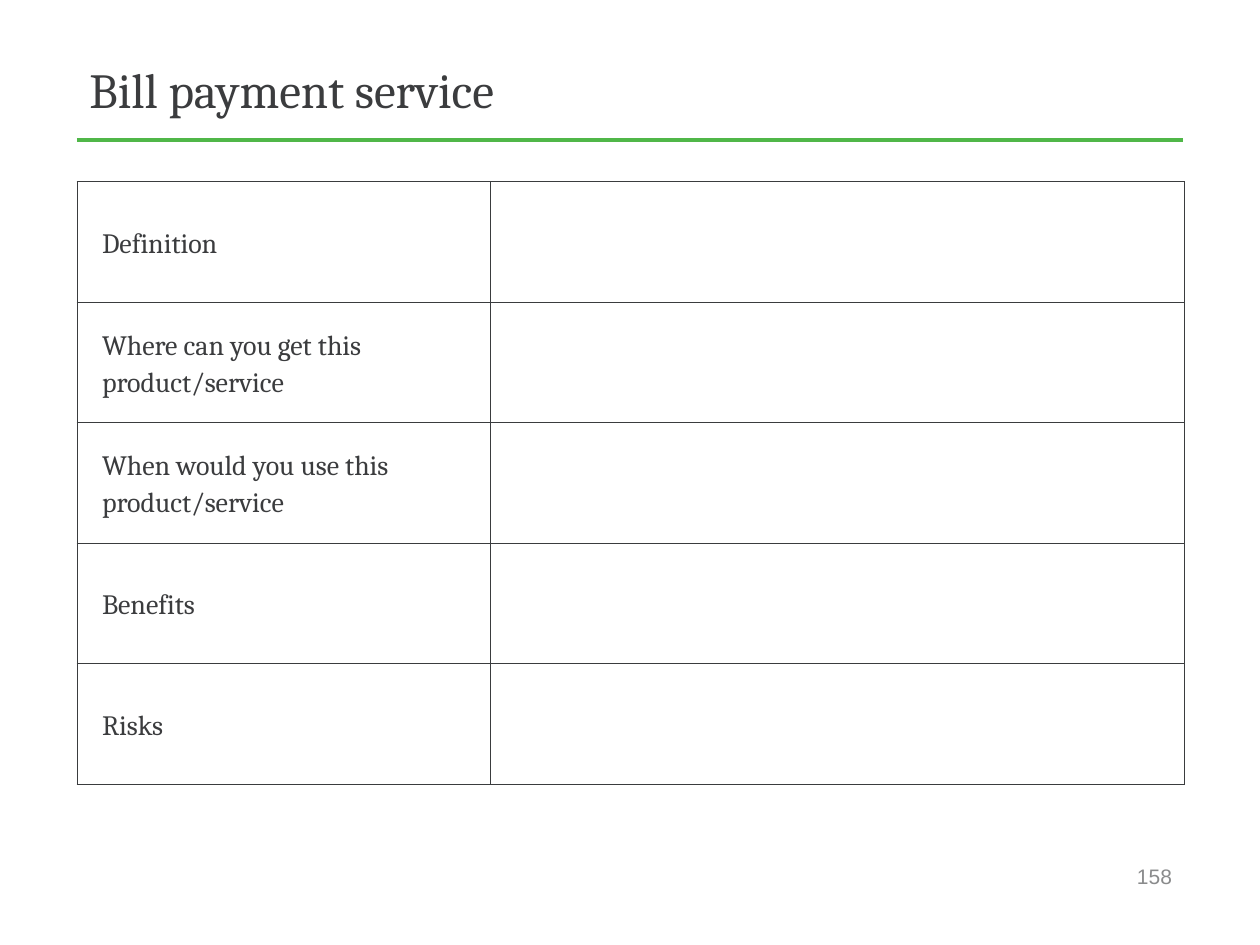
from dataclasses import dataclass

from lxml.etree import SubElement
from pptx import Presentation
from pptx.dml.color import RGBColor
from pptx.enum.shapes import MSO_CONNECTOR
from pptx.enum.text import MSO_ANCHOR, PP_ALIGN
from pptx.oxml.ns import qn
from pptx.util import Inches, Pt


@dataclass(frozen=True)
class Theme:
    serif: str = "Cambria"
    sans: str = "Arial"
    ink: str = "3B3C3E"
    border: str = "3A3C3E"
    accent: str = "50B748"
    muted: str = "8A8B8C"
    title_size: float = 28
    label_size: float = 16
    number_size: float = 12
    rule_width: float = 2
    border_width: float = 0.25


THEME = Theme()
LEFT, WIDTH = 0.61, 8.79
QUESTIONS = [
    "Definition",
    "Where can you get this product/service",
    "When would you use this product/service",
    "Benefits",
    "Risks",
]


def add_span(para, text, font, size, color):
    span = para.add_run()
    span.text = text
    span.font.name = font
    span.font.size = Pt(size)
    span.font.color.rgb = RGBColor.from_string(color)


def border_cell(cell):
    properties = cell._tc.get_or_add_tcPr()
    # Borders must come before the fill in the cell properties
    for index, side in enumerate(("lnL", "lnR", "lnT", "lnB")):
        line = SubElement(properties, qn(f"a:{side}"), w=str(Pt(THEME.border_width)))
        properties.insert(index, line)
        fill = SubElement(line, qn("a:solidFill"))
        SubElement(fill, qn("a:srgbClr"), val=THEME.border)


def add_heading(page, text, left, top, width, height):
    # Green rule along the bottom of the title
    rule = page.shapes.add_connector(
        MSO_CONNECTOR.STRAIGHT, Inches(left), Inches(top + height),
        Inches(left + width - 0.01), Inches(top + height))
    rule.line.color.rgb = RGBColor.from_string(THEME.accent)
    rule.line.width = Pt(THEME.rule_width)
    SubElement(rule._element.spPr, qn("a:effectLst"))

    title = page.shapes.title
    title.left, title.top = Inches(left), Inches(top)
    title.width, title.height = Inches(width), Inches(height)
    frame = title.text_frame
    frame.vertical_anchor = MSO_ANCHOR.MIDDLE
    para = frame.paragraphs[0]
    para.alignment = PP_ALIGN.LEFT
    add_span(para, text, THEME.serif, THEME.title_size, THEME.ink)


def add_question_table(page, questions, left, top, width, height):
    label_width = 3.28
    table = page.shapes.add_table(
        len(questions), 2, Inches(left), Inches(top), Inches(width), Inches(height)).table
    table.first_row = False
    table.horz_banding = False
    table.columns[0].width = Inches(label_width)
    table.columns[1].width = Inches(width - label_width)
    for row, question in zip(table.rows, questions):
        row.height = Inches(height / len(questions))
        for cell in row.cells:
            cell.fill.background()
            border_cell(cell)
        label = row.cells[0]
        label.vertical_anchor = MSO_ANCHOR.MIDDLE
        label.margin_left = Inches(0.2)
        para = label.text_frame.paragraphs[0]
        para.line_spacing = 1.15
        add_span(para, question, THEME.serif, THEME.label_size, THEME.ink)


def add_page_number(page, number, left, top, width, height):
    box = page.shapes.add_textbox(Inches(left), Inches(top), Inches(width), Inches(height))
    frame = box.text_frame
    frame.word_wrap = True
    frame.vertical_anchor = MSO_ANCHOR.MIDDLE
    para = frame.paragraphs[0]
    para.alignment = PP_ALIGN.RIGHT
    add_span(para, number, THEME.sans, THEME.number_size, THEME.muted)


def main():
    deck = Presentation()
    deck.slide_width, deck.slide_height = Inches(10), Inches(7.5)
    page = deck.slides.add_slide(deck.slide_layouts[5])
    add_heading(page, "Bill payment service", LEFT, 0.3, WIDTH, 0.81)
    add_question_table(page, QUESTIONS, LEFT, 1.44, WIDTH, 4.78)
    add_page_number(page, "158", 6.23, 6.75, 3.17, 0.4)
    deck.save("out.pptx")


if __name__ == "__main__":
    main()
